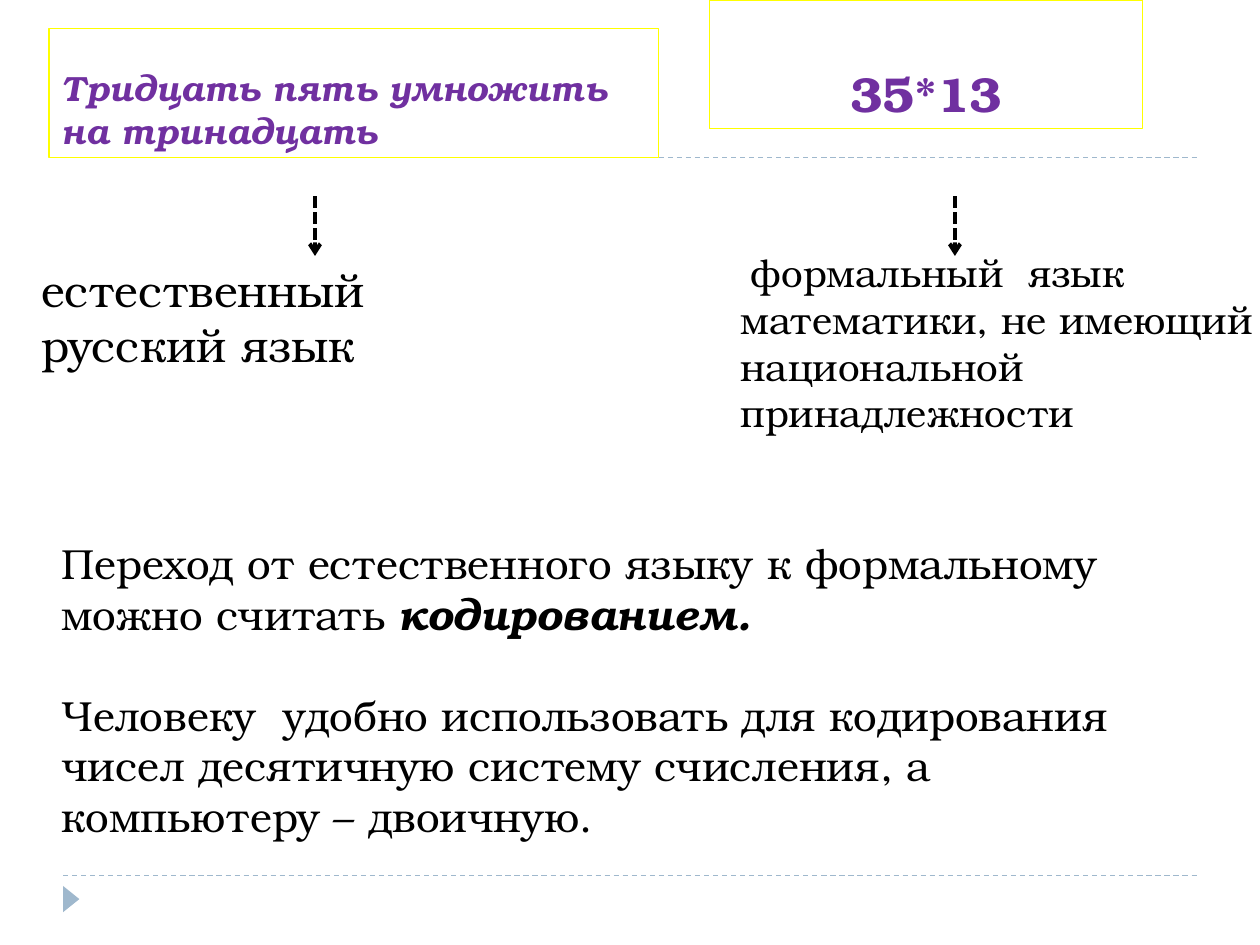
from lxml.etree import SubElement
from pptx import Presentation
from pptx.dml.color import RGBColor
from pptx.enum.dml import MSO_LINE_DASH_STYLE as DASH
from pptx.enum.shapes import MSO_CONNECTOR, MSO_SHAPE
from pptx.enum.text import MSO_ANCHOR, PP_ALIGN
from pptx.oxml.ns import qn
from pptx.util import Cm, Pt

COLORS = {"rule": "9FB8CD", "frame": "FFFF00", "accent": "7030A0", "text": "000000"}
SERIF, SANS = "TeX Gyre Bonum", "Cabin"

RULES_Y = [17.65, 3.18]
ARROWS_X = [6.35, 19.25]
ARROW_TOP, ARROW_BOTTOM = 3.96, 5.16

EXAMPLES = [
    ((0.99, 0.58, 12.29, 2.59), "Тридцать пять умножить на тринадцать", 20, True, PP_ALIGN.LEFT),
    ((14.3, 0, 8.74, 2.59), "35*13", 28, False, PP_ALIGN.CENTER),
]
NATURAL = ((0.58, 5.16, 10.31, 2.21), "естественный русский язык", 26)
FORMAL = ((14.68, 4.75, 11.23, 4.37),
          "формальный  язык математики, не имеющий национальной принадлежности", 22)
SUMMARY_BOX = (0.99, 10.72, 23.42, 6.4)
SUMMARY = [
    ("Переход от естественного языку к формальному можно считать ", "кодированием."),
    ("Человеку  удобно использовать для кодирования чисел десятичную систему счисления, "
     "а компьютеру – двоичную.", ""),
]


def rgb(name):
    return RGBColor.from_string(COLORS[name])


def add_line(s, start, end, color, width, dash):
    """Draw a dashed line without a shadow and return it."""
    line = s.shapes.add_connector(MSO_CONNECTOR.STRAIGHT, *map(Cm, start + end))
    line.line.color.rgb = rgb(color)
    line.line.width = Pt(width)
    line.line.dash_style = dash
    SubElement(line._element.spPr, qn("a:effectLst"))
    return line


def add_text_box(s, box):
    """Add an empty wrapping text box and return it."""
    sp = s.shapes.add_textbox(*map(Cm, box))
    sp.text_frame.word_wrap = True
    return sp


def style(p, size, color="text", before=6):
    """Set the font and spacing shared by a whole paragraph."""
    p.font.name, p.font.size = SERIF, Pt(size)
    p.font.color.rgb = rgb(color)
    p.space_before = Pt(before)


def add_example(s, box, text, size, italic, align):
    """Add a framed expression with its text at the bottom."""
    sp = add_text_box(s, box)
    sp.line.color.rgb = rgb("frame")
    sp.line.width = Pt(0.75)
    sp.text_frame.vertical_anchor = MSO_ANCHOR.BOTTOM
    p = sp.text_frame.paragraphs[0]
    p.text, p.alignment = text, align
    style(p, size, "accent")
    p.font.bold, p.font.italic = True, italic


def add_language(s, box, text, size, lead=""):
    """Add a language description, optionally after a larger lead-in."""
    p = add_text_box(s, box).text_frame.paragraphs[0]
    style(p, size)
    if lead:
        r = p.add_run()
        r.text, r.font.name, r.font.size = lead, SANS, Pt(26)
    p.add_run().text = text


def add_summary(s):
    """Add the conclusions, one paragraph each."""
    tf = add_text_box(s, SUMMARY_BOX).text_frame
    for i, (plain, strong) in enumerate(SUMMARY):
        p = tf.add_paragraph() if i else tf.paragraphs[0]
        style(p, 24, before=29 if i else 0)
        p.add_run().text = plain
        if strong:
            r = p.add_run()
            r.text, r.font.bold, r.font.italic = strong, True, True


def main():
    prs = Presentation()
    prs.slide_width, prs.slide_height = Cm(25.4), Cm(19.05)
    s = prs.slides.add_slide(prs.slide_layouts[6])

    for y in RULES_Y:
        add_line(s, (1.27, y), (24.13, y), "rule", 0.75, DASH.DASH)
    marker = s.shapes.add_shape(MSO_SHAPE.ISOSCELES_TRIANGLE, *map(Cm, (1.17, 17.96, 0.53, 0.33)))
    marker.rotation = 90
    marker.shadow.inherit = False
    marker.fill.solid()
    marker.fill.fore_color.rgb = rgb("rule")
    marker.line.fill.background()

    for example in EXAMPLES:
        add_example(s, *example)
    add_language(s, *NATURAL)
    add_language(s, *FORMAL, lead=" ")
    add_summary(s)

    for x in ARROWS_X:
        arrow = add_line(s, (x, ARROW_TOP), (x, ARROW_BOTTOM), "text", 2.25, DASH.SQUARE_DOT)
        SubElement(arrow.line._get_or_add_ln(), qn("a:tailEnd"), type="arrow")

    prs.save("out.pptx")


if __name__ == "__main__":
    main()
